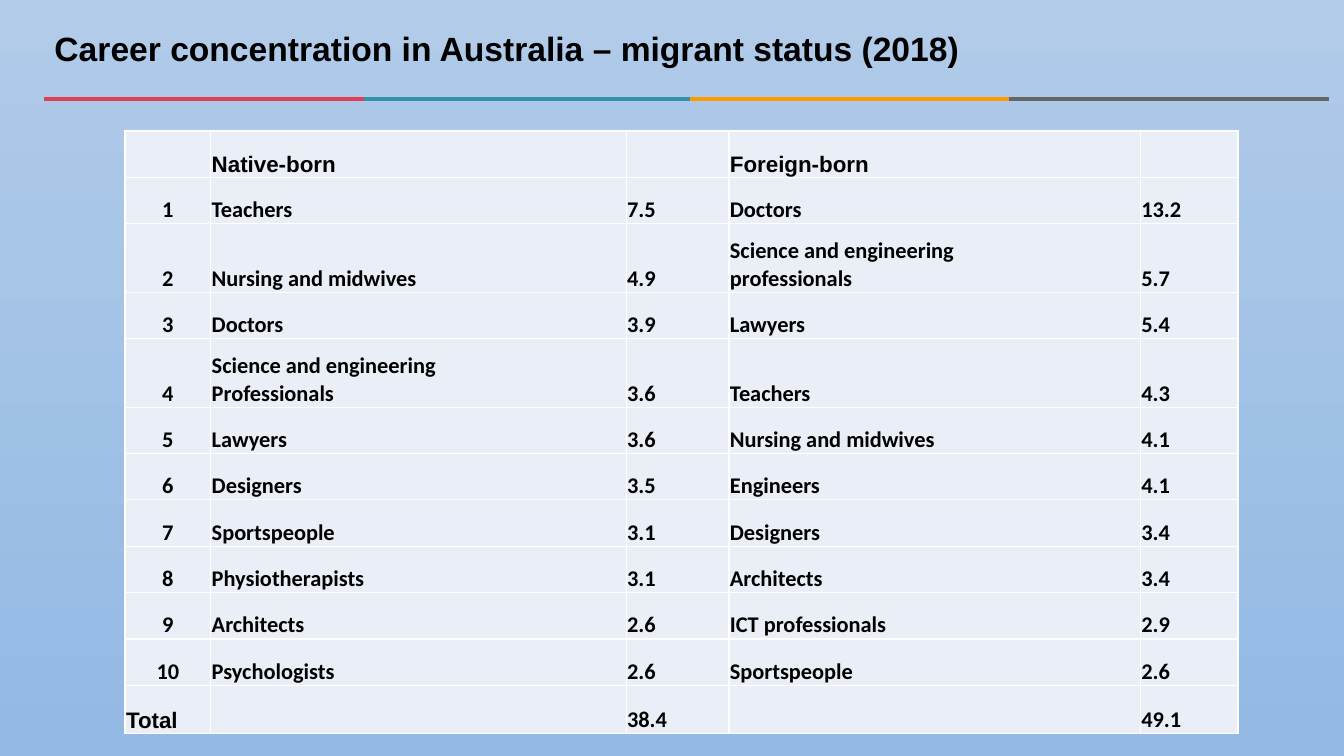
from pptx import Presentation
from pptx.dml.color import RGBColor
from pptx.enum import shapes, text
from pptx.oxml import parse_xml
from pptx.oxml.ns import nsdecls
from pptx.util import Inches, Pt

COLOURS = {"sky_top": "B1CBE9", "sky_bottom": "93B9E4", "red": "DE3F53",
           "teal": "3392AB", "orange": "FF9900", "grey": "666666",
           "ink": "000000", "cell": "EAEFF7", "border": "FFFFFF"}
RULE_Y = 0.98
RULE_STOPS = [0.44, 3.61, 6.84, 10.01, 13.18]
RULE_COLOURS = ["red", "teal", "orange", "grey"]
COLUMNS = [0.85, 4.12, 1.02, 4.08, 0.97]
ROW, TALL_ROW, TOTAL_ROW = 0.46, 0.68, 0.48
CELL_FORMAT = {"margin_left": Inches(0.01), "margin_right": Inches(0.01),
               "margin_top": Inches(0.01), "margin_bottom": 0,
               "vertical_anchor": text.MSO_ANCHOR.BOTTOM}
CAREERS = [
    ("Teachers", 7.5, "Doctors", 13.2),
    ("Nursing and midwives", 4.9, "Science and engineering\nprofessionals", 5.7),
    ("Doctors", 3.9, "Lawyers", 5.4),
    ("Science and engineering\nProfessionals", 3.6, "Teachers", 4.3),
    ("Lawyers", 3.6, "Nursing and midwives", 4.1),
    ("Designers", 3.5, "Engineers", 4.1),
    ("Sportspeople", 3.1, "Designers", 3.4),
    ("Physiotherapists", 3.1, "Architects", 3.4),
    ("Architects", 2.6, "ICT professionals", 2.9),
    ("Psychologists", 2.6, "Sportspeople", 2.6),
]


def colour(name):
    return RGBColor.from_string(COLOURS[name])


def apply_format(target, values):
    for name, value in values.items():
        setattr(target, name, value)


def format_font(font, face, size):
    apply_format(font, {"name": face, "size": Pt(size), "bold": True})
    font.color.rgb = colour("ink")


def paint_background(page):
    fill = page.background.fill
    fill.gradient()
    fill.gradient_angle = 270
    for stop, name in zip(fill.gradient_stops, ["sky_top", "sky_bottom"]):
        stop.color.rgb = colour(name)


def add_rule(page):
    """Draw the four-coloured line under the title."""
    for start, end, name in zip(RULE_STOPS, RULE_STOPS[1:], RULE_COLOURS):
        line = page.shapes.add_connector(
            shapes.MSO_CONNECTOR.STRAIGHT, Inches(start), Inches(RULE_Y),
            Inches(end), Inches(RULE_Y))
        line.line.color.rgb = colour(name)
        line.line.width = Pt(2.75)
        line._element.spPr.append(parse_xml(f"<a:effectLst {nsdecls('a')}/>"))


def set_title(page, words):
    title = page.shapes.title
    apply_format(title, {"left": Inches(0.44), "top": Inches(0.11),
                         "width": Inches(12.75), "height": Inches(0.78)})
    frame = title.text_frame
    frame.text = words
    apply_format(frame, {"vertical_anchor": text.MSO_ANCHOR.MIDDLE,
                         "auto_size": text.MSO_AUTO_SIZE.NONE})
    para = frame.paragraphs[0]
    apply_format(para, {"alignment": text.PP_ALIGN.LEFT, "line_spacing": 0.9})
    format_font(para.runs[0].font, "Arial", 24)


def add_borders(cell):
    properties = cell._tc.get_or_add_tcPr()
    for index, side in enumerate(["lnL", "lnR", "lnT", "lnB"]):
        properties.insert(index, parse_xml(
            f'<a:{side} {nsdecls("a")} w="{Pt(1)}"><a:solidFill>'
            f'<a:srgbClr val="{COLOURS["border"]}"/></a:solidFill></a:{side}>'))


def fill_cell(cell, words, face, alignment):
    cell.fill.solid()
    cell.fill.fore_color.rgb = colour("cell")
    add_borders(cell)
    if not words:
        return
    apply_format(cell, CELL_FORMAT)
    cell.text = words
    for para in cell.text_frame.paragraphs:
        para.alignment = alignment
        format_font(para.runs[0].font, face, 16)


def career_rows():
    """List the header, the ranked careers and the totals as text."""
    rows = [["", "Native-born", "", "Foreign-born", ""]]
    for rank, (native, native_share, foreign, foreign_share) in enumerate(CAREERS, 1):
        rows.append([str(rank), native, str(native_share), foreign, str(foreign_share)])
    native_total, foreign_total = (
        f"{sum(career[i] for career in CAREERS):.1f}" for i in (1, 3))
    rows.append(["Total", "", native_total, "", foreign_total])
    return rows


def add_career_table(page):
    rows = career_rows()
    heights = [TALL_ROW if any("\n" in words for words in row) else ROW
               for row in rows]
    heights[-1] = TOTAL_ROW
    table = page.shapes.add_table(
        len(rows), len(COLUMNS), Inches(1.24), Inches(1.3),
        Inches(sum(COLUMNS)), Inches(sum(heights))).table
    apply_format(table, {"first_row": False, "horz_banding": False})
    for column, width in zip(table.columns, COLUMNS):
        column.width = Inches(width)
    for r, (row, height) in enumerate(zip(rows, heights)):
        table.rows[r].height = Inches(height)
        for c, words in enumerate(row):
            label = r == 0 or words == "Total"
            centred = c == 0 and not label
            fill_cell(table.cell(r, c), words, "Arial" if label else "Calibri",
                      text.PP_ALIGN.CENTER if centred else text.PP_ALIGN.LEFT)


def main():
    deck = Presentation()
    apply_format(deck, {"slide_width": Inches(13.33), "slide_height": Inches(7.5)})
    page = deck.slides.add_slide(deck.slide_layouts.get_by_name("Title Only"))
    paint_background(page)
    add_rule(page)
    set_title(page, "Career concentration in Australia – migrant status (2018)")
    add_career_table(page)
    deck.save("out.pptx")


if __name__ == "__main__":
    main()
